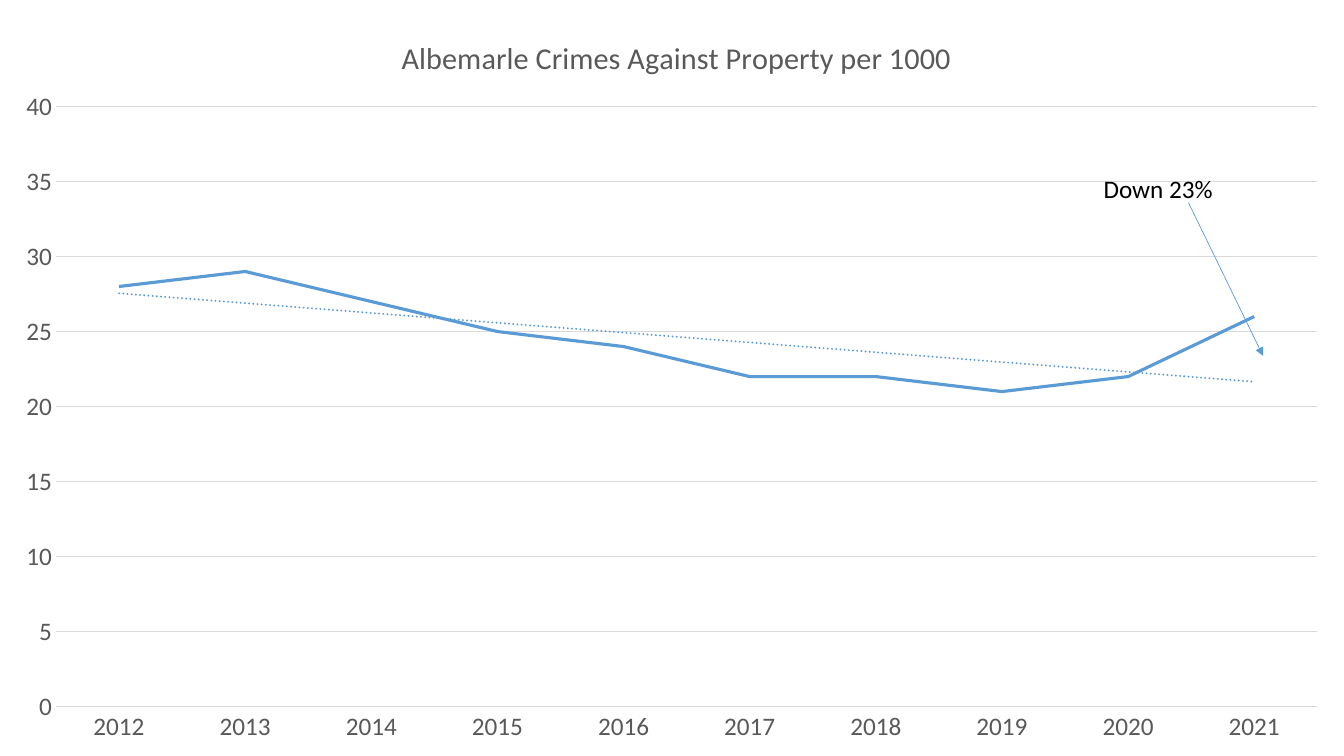
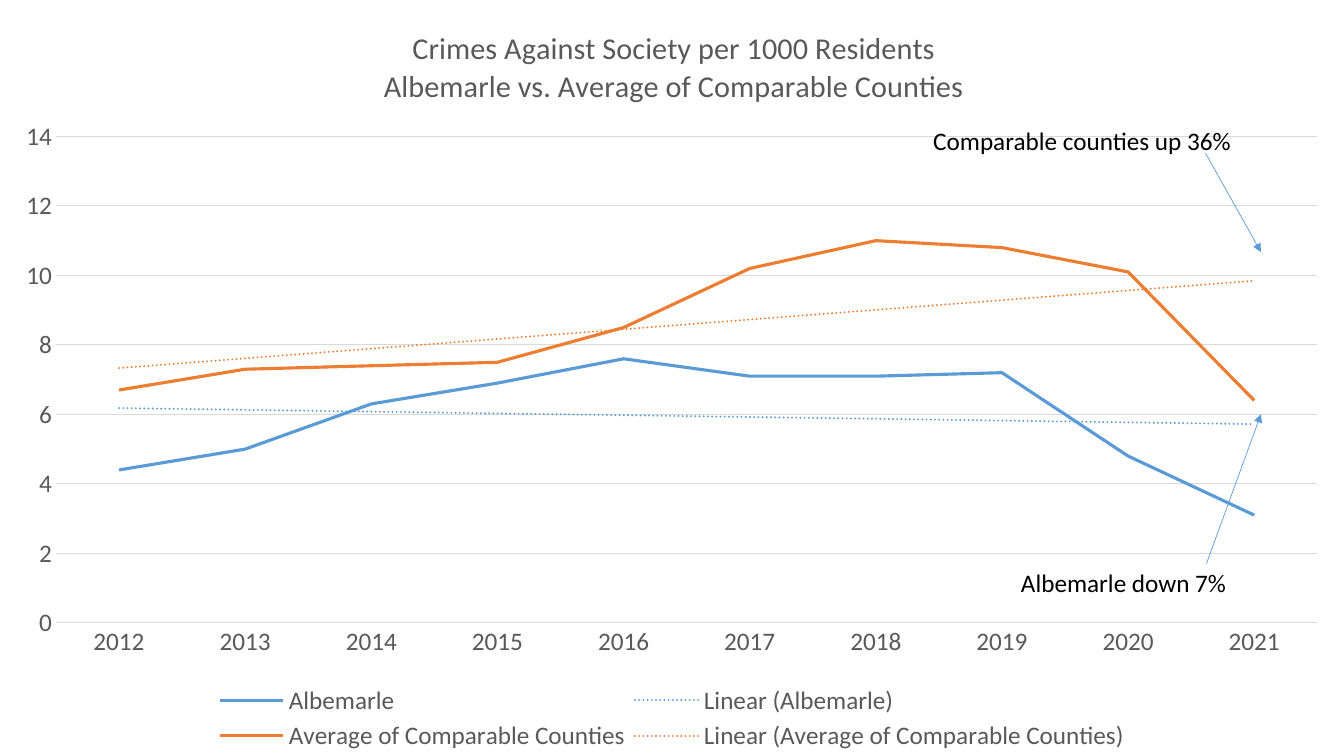
from dataclasses import dataclass

import pptx
import pptx.chart.chart
import pptx.chart.data
import pptx.dml.color
import pptx.dml.line
import pptx.enum.chart
import pptx.enum.shapes
import pptx.enum.text
import pptx.oxml
import pptx.oxml.ns
import pptx.slide
import pptx.util
from lxml import etree

Pt = pptx.util.Pt
RGBColor = pptx.dml.color.RGBColor
qn = pptx.oxml.ns.qn


@dataclass(frozen=True)
class Theme:
    font: str = "Calibri"
    background: str = "FFFFFF"
    label: str = "595959"
    callout: str = "000000"
    rule: str = "D9D9D9"
    blue: str = "5B9BD5"
    orange: str = "ED7D31"
    title_size: float = 21.6
    body_size: float = 18
    series_width: float = 2.25
    trend_width: float = 1.5
    rule_width: float = 0.75
    arrow_width: float = 0.5


THEME = Theme()
WIDTH, HEIGHT = 960, 540
YEARS = [str(year) for year in range(2012, 2022)]


@dataclass(frozen=True)
class Box:
    left: float
    top: float
    width: float = 0
    height: float = 0


@dataclass(frozen=True)
class Trend:
    name: str
    rates: list[float]
    color: str


@dataclass(frozen=True)
class Callout:
    text: str
    box: Box
    tail: tuple[float, float]
    tip: tuple[float, float]
    wrap: bool = False


@dataclass(frozen=True)
class CrimeSlide:
    title: str
    title_at: Box
    plot: Box
    maximum: float
    step: float
    trends: list[Trend]
    callouts: list[Callout]
    legend: Box | None = None


PROPERTY_TITLE = "Albemarle Crimes Against Property per 1000"
SLIDES = [
    CrimeSlide(
        PROPERTY_TITLE, Box(283, 22), Box(40, 76, 901, 429), 40, 5,
        [Trend(PROPERTY_TITLE, [28, 29, 27, 25, 24, 22, 22, 21, 22, 26], THEME.blue)],
        [Callout("Down 23%", Box(781.2, 120.2, 93.6, 28.8), (848.9, 144.7), (902.2, 254.2))],
    ),
    CrimeSlide(
        "Crimes Against Society per 1000 Residents\nAlbemarle vs. Average of Comparable Counties",
        Box(272, 18), Box(40, 97.5, 901, 347.5), 14, 2,
        [
            Trend("Albemarle", [4.4, 5, 6.3, 6.9, 7.6, 7.1, 7.1, 7.2, 4.8, 3.1], THEME.blue),
            Trend("Average of Comparable Counties",
                  [6.7, 7.3, 7.4, 7.5, 8.5, 10.2, 11, 10.8, 10.1, 6.4], THEME.orange),
        ],
        [
            Callout("Albemarle down 7%", Box(722.2, 401.8, 177.8, 28.8),
                    (861.8, 402.5), (900.7, 295.9), wrap=True),
            Callout("Comparable counties up 36%", Box(659.5, 85.7, 229.7, 28.8),
                    (861.1, 109.4), (900.7, 180)),
        ],
        legend=Box(150, 486, 660, 54),
    ),
]


def style_font(font, size: float, color: str) -> None:
    font.name = THEME.font
    font.size = Pt(size)
    font.bold = False
    font.color.rgb = RGBColor.from_string(color)


def style_line(line: pptx.dml.line.LineFormat, color: str, width: float) -> None:
    line.color.rgb = RGBColor.from_string(color)
    line.width = Pt(width)


def place_part(chart: pptx.chart.chart.Chart, tag: str, box: Box, inner: bool = False) -> None:
    part = chart.element.find(".//" + qn(tag))
    for previous in part.findall(qn("c:layout")):
        part.remove(previous)
    layout = etree.Element(qn("c:layout"))
    manual = etree.SubElement(layout, qn("c:manualLayout"))
    settings = [("layoutTarget", "inner")] if inner else []
    settings += [("xMode", "edge"), ("yMode", "edge"),
                 ("x", box.left / WIDTH), ("y", box.top / HEIGHT)]
    if box.width:
        settings += [("w", box.width / WIDTH), ("h", box.height / HEIGHT)]
    for name, value in settings:
        etree.SubElement(manual, qn("c:" + name)).set("val", str(value))
    overlay = part.find(qn("c:overlay"))
    part.insert(0 if overlay is None else part.index(overlay), layout)


def add_trendline(series, color: str) -> None:
    trendline = pptx.oxml.parse_xml(
        f'<c:trendline {pptx.oxml.ns.nsdecls("c", "a")}>'
        f'<c:spPr><a:ln w="{Pt(THEME.trend_width)}" cap="rnd"><a:solidFill>'
        f'<a:srgbClr val="{color}"/></a:solidFill><a:prstDash val="sysDot"/></a:ln></c:spPr>'
        '<c:trendlineType val="linear"/><c:dispRSqr val="0"/><c:dispEq val="0"/>'
        '</c:trendline>'
    )
    series._element.find(qn("c:cat")).addprevious(trendline)


def style_axes(chart: pptx.chart.chart.Chart, content: CrimeSlide) -> None:
    years, rates = chart.category_axis, chart.value_axis
    for axis in (years, rates):
        axis.major_tick_mark = axis.minor_tick_mark = pptx.enum.chart.XL_TICK_MARK.NONE
        style_font(axis.tick_labels.font, THEME.body_size, THEME.label)
    years.has_major_gridlines = False
    style_line(years.format.line, THEME.rule, THEME.rule_width)
    rates.minimum_scale, rates.maximum_scale = 0, content.maximum
    rates.major_unit = content.step
    rates.tick_labels.number_format = "#,##0"
    rates.tick_labels.number_format_is_linked = False
    rates.format.line.fill.background()
    rates.has_major_gridlines = True
    style_line(rates.major_gridlines.format.line, THEME.rule, THEME.rule_width)


def add_crime_chart(slide: pptx.slide.Slide, content: CrimeSlide) -> None:
    data = pptx.chart.data.CategoryChartData()
    data.categories = YEARS
    for trend in content.trends:
        data.add_series(trend.name, trend.rates)
    chart = slide.shapes.add_chart(
        pptx.enum.chart.XL_CHART_TYPE.LINE, 0, 0, Pt(WIDTH), Pt(HEIGHT), data
    ).chart
    style_font(chart.font, THEME.body_size, THEME.callout)
    chart.plots[0].vary_by_categories = False
    for series, trend in zip(chart.plots[0].series, content.trends):
        series.smooth = False
        series.marker.style = pptx.enum.chart.XL_MARKER_STYLE.NONE
        style_line(series.format.line, trend.color, THEME.series_width)
        add_trendline(series, trend.color)
    style_axes(chart, content)
    chart.has_title = True
    heading = chart.chart_title.text_frame
    heading.text = content.title
    for paragraph in heading.paragraphs:
        style_font(paragraph.font, THEME.title_size, THEME.label)
        for run in paragraph.runs:
            style_font(run.font, THEME.title_size, THEME.label)
    chart.chart_title.include_in_layout = False
    place_part(chart, "c:title", content.title_at)
    place_part(chart, "c:plotArea", content.plot, inner=True)
    chart.has_legend = content.legend is not None
    if content.legend:
        chart.legend.position = pptx.enum.chart.XL_LEGEND_POSITION.BOTTOM
        chart.legend.include_in_layout = False
        style_font(chart.legend.font, THEME.body_size, THEME.label)
        place_part(chart, "c:legend", content.legend)


def add_callout(slide: pptx.slide.Slide, callout: Callout) -> None:
    box = callout.box
    note = slide.shapes.add_textbox(Pt(box.left), Pt(box.top), Pt(box.width), Pt(box.height))
    frame = note.text_frame
    frame.word_wrap = callout.wrap
    frame.auto_size = pptx.enum.text.MSO_AUTO_SIZE.SHAPE_TO_FIT_TEXT
    frame.text = callout.text
    style_font(frame.paragraphs[0].runs[0].font, THEME.body_size, THEME.callout)
    arrow = slide.shapes.add_connector(
        pptx.enum.shapes.MSO_CONNECTOR.STRAIGHT,
        *(Pt(length) for length in callout.tail + callout.tip),
    )
    style_line(arrow.line, THEME.blue, THEME.arrow_width)
    properties = arrow._element.spPr
    etree.SubElement(properties.find(qn("a:ln")), qn("a:tailEnd")).set("type", "triangle")
    etree.SubElement(properties, qn("a:effectLst"))


def main() -> None:
    deck = pptx.Presentation()
    deck.slide_width, deck.slide_height = Pt(WIDTH), Pt(HEIGHT)
    backdrop = deck.slide_master.background.fill
    backdrop.solid()
    backdrop.fore_color.rgb = RGBColor.from_string(THEME.background)
    for content in SLIDES:
        slide = deck.slides.add_slide(deck.slide_layouts.get_by_name("Blank"))
        add_crime_chart(slide, content)
        for callout in content.callouts:
            add_callout(slide, callout)
    deck.save("out.pptx")


if __name__ == "__main__":
    main()
